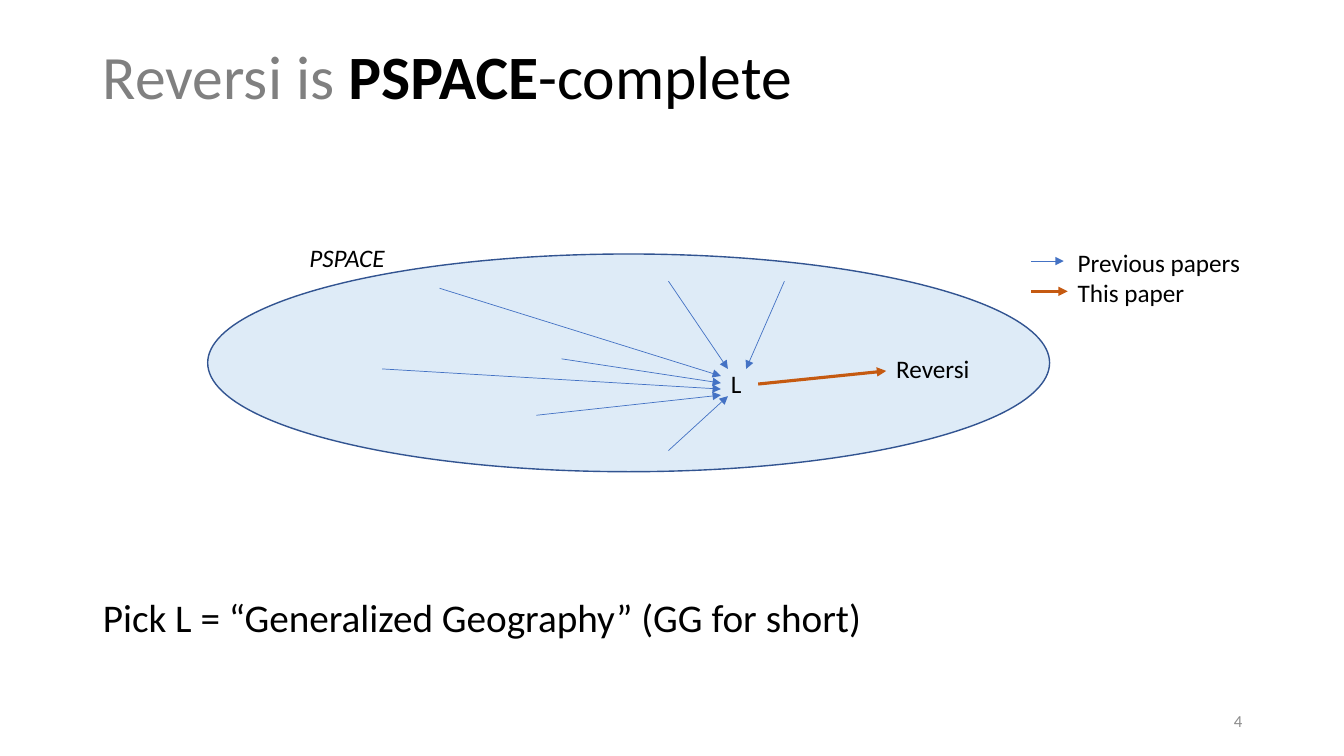
from lxml import etree
from pptx import Presentation
from pptx.dml.color import RGBColor
from pptx.enum.shapes import MSO_CONNECTOR, MSO_SHAPE
from pptx.enum.text import MSO_ANCHOR, MSO_AUTO_SIZE, PP_ALIGN
from pptx.oxml.ns import qn
from pptx.util import Inches, Pt

BLACK = RGBColor(0x00, 0x00, 0x00)
GRAY = RGBColor(0x80, 0x80, 0x80)
NUMBER_GRAY = RGBColor(0x8C, 0x8C, 0x8C)
PALE_BLUE = RGBColor(0xDE, 0xEB, 0xF7)
OUTLINE_BLUE = RGBColor(0x32, 0x54, 0x91)
ARROW_BLUE = RGBColor(0x44, 0x72, 0xC4)
ORANGE = RGBColor(0xC5, 0x5A, 0x11)
FONT = "Calibri"
STRAIGHT = MSO_CONNECTOR.STRAIGHT
ELLIPSE = MSO_SHAPE.OVAL
TOP, MIDDLE = MSO_ANCHOR.TOP, MSO_ANCHOR.MIDDLE
LEFT, RIGHT = PP_ALIGN.LEFT, PP_ALIGN.RIGHT
NO_AUTOFIT = MSO_AUTO_SIZE.NONE

PREVIOUS_REDUCTIONS = [
    ((2.3, 0.34), (5.09, 1.21)),
    ((1.73, 1.14), (5.09, 1.34)),
    ((4.57, 1.95), (5.16, 1.41)),
    ((5.72, 0.27), (5.34, 1.14)),
    ((3.51, 1.04), (5.09, 1.28)),
    ((3.26, 1.6), (5.09, 1.4)),
    ((4.57, 0.27), (5.16, 1.14)),
]


def add_run(paragraph, text, size=18, color=BLACK, bold=False, italic=False):
    """Append one formatted run to a paragraph."""
    run = paragraph.add_run()
    run.text = text
    font = run.font
    font.name, font.size, font.bold, font.italic = FONT, Pt(size), bold, italic
    font.color.rgb = color


def add_label(slide, left, top, width, height, lines, wrap=True, anchor=TOP,
              align=LEFT, **run_format):
    """Add a text box with one paragraph per line."""
    box = slide.shapes.add_textbox(Inches(left), Inches(top), Inches(width), Inches(height))
    frame = box.text_frame
    frame.word_wrap = wrap
    frame.vertical_anchor = anchor
    for index, line in enumerate(lines):
        paragraph = frame.add_paragraph() if index else frame.paragraphs[0]
        paragraph.alignment = align
        add_run(paragraph, line, **run_format)


def add_arrow(slide, left, top, start, end, color=ARROW_BLUE, width=0.5):
    """Draw an arrow between two points measured from the given corner."""
    arrow = slide.shapes.add_connector(
        STRAIGHT, Inches(left + start[0]), Inches(top + start[1]),
        Inches(left + end[0]), Inches(top + end[1]))
    arrow.line.color.rgb = color
    arrow.line.width = Pt(width)
    etree.SubElement(arrow.line._get_or_add_ln(), qn("a:tailEnd"), type="triangle")
    etree.SubElement(arrow._element.spPr, qn("a:effectLst"))


def fill_placeholder(placeholder, left, top, width, height, runs, size):
    """Move a placeholder and write one left-aligned paragraph without a bullet."""
    placeholder.left, placeholder.top = Inches(left), Inches(top)
    placeholder.width, placeholder.height = Inches(width), Inches(height)
    frame = placeholder.text_frame
    frame.auto_size = NO_AUTOFIT
    frame.vertical_anchor = MIDDLE
    paragraph = frame.paragraphs[0]
    paragraph.alignment = LEFT
    paragraph.line_spacing = 0.9
    paragraph.space_before = Pt(0)
    properties = paragraph._p.get_or_add_pPr()
    properties.set("marL", "0")
    properties.set("indent", "0")
    etree.SubElement(properties, qn("a:buNone"))
    for text, run_format in runs:
        add_run(paragraph, text, size=size, **run_format)


def add_reduction_diagram(slide, left, top, width, height):
    """Draw the PSPACE class with the reductions into L and on to Reversi."""
    ellipse = slide.shapes.add_shape(
        ELLIPSE, Inches(left), Inches(top), Inches(width), Inches(height))
    ellipse.shadow.inherit = False
    ellipse.fill.solid()
    ellipse.fill.fore_color.rgb = PALE_BLUE
    ellipse.line.color.rgb = OUTLINE_BLUE
    ellipse.line.width = Pt(1)
    add_label(slide, left + 0.91, top - 0.17, 0.96, 0.4, ["PSPACE"], italic=True)
    add_label(slide, left + 5.09, top + 1.08, 0.52, 0.4, ["L"])
    add_label(slide, left + 6.73, top + 0.94, 0.96, 0.4, ["Reversi"])
    for start, end in PREVIOUS_REDUCTIONS:
        add_arrow(slide, left, top, start, end)
    add_arrow(slide, left, top, (5.46, 1.29), (6.73, 1.16), color=ORANGE, width=2.25)


def add_legend(slide, left, top, width, height):
    """Explain the two arrow styles."""
    add_arrow(slide, left, top, (0, 0.19), (0.32, 0.19))
    add_arrow(slide, left, top, (0, 0.49), (0.36, 0.49), color=ORANGE, width=2.25)
    add_label(slide, left + 0.36, top, width - 0.36, height,
              ["Previous papers", "This paper"], wrap=False)


def build_slide(presentation):
    """Lay out the title, diagram, legend, conclusion and slide number."""
    slide = presentation.slides.add_slide(presentation.slide_layouts[1])
    title, body = slide.placeholders
    fill_placeholder(title, 0.92, 0.4, 11.5, 0.78, [
        ("Reversi is ", {"color": GRAY}),
        ("PSPACE", {"bold": True}),
        ("-complete", {}),
    ], size=44)
    fill_placeholder(body, 0.92, 5.85, 11.86, 0.6, [
        ("Pick L = “Generalized Geography” (GG for short)", {}),
    ], size=28)
    add_reduction_diagram(slide, 2.06, 2.52, 8.35, 2.16)
    add_legend(slide, 10.23, 2.4, 2.19, 0.71)
    add_label(slide, 9.42, 6.95, 3, 0.4, ["4"], anchor=MIDDLE, align=RIGHT,
              size=12, color=NUMBER_GRAY)


def main():
    """Create and save the presentation."""
    presentation = Presentation()
    presentation.slide_width = Inches(13.33)
    presentation.slide_height = Inches(7.5)
    build_slide(presentation)
    presentation.save("out.pptx")


if __name__ == "__main__":
    main()
